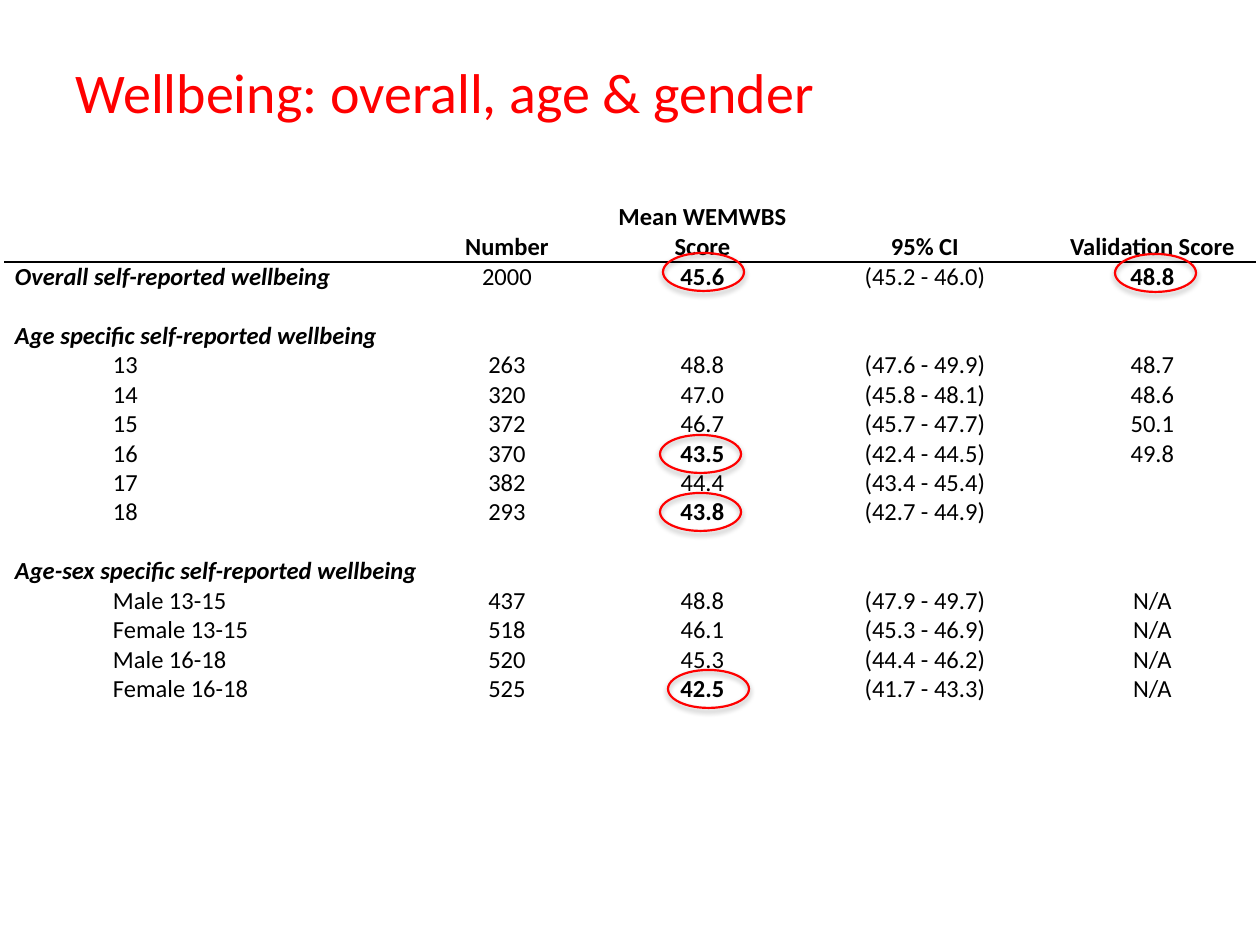
from lxml import etree
from pptx import Presentation
from pptx.dml.color import RGBColor
from pptx.enum.shapes import MSO_SHAPE
from pptx.enum.text import MSO_ANCHOR as ANCHOR, PP_ALIGN as ALIGN
from pptx.oxml import parse_xml
from pptx.oxml.ns import nsdecls, qn
from pptx.util import Pt

EMU_PER_PX = 914400 / 126
RED = RGBColor(0xFF, 0x00, 0x00)
BLACK = RGBColor(0x00, 0x00, 0x00)
FONT = "Calibri"

COL_WIDTHS = [98, 306, 196, 195, 250, 205]
HEADER_H, ROW_H = 67, 29
CELL_INSET = 10
HEADINGS = ["", "", "Number", "Mean WEMWBS Score", "95% CI", "Validation Score"]
BLANK = [""] * 6
ROWS = [
    ["Overall self-reported wellbeing", "", "2000", "45.6", "(45.2 - 46.0)", "48.8"],
    BLANK,
    ["Age specific self-reported wellbeing", *BLANK[1:]],
    ["", "13", "263", "48.8", "(47.6 - 49.9)", "48.7"],
    ["", "14", "320", "47.0", "(45.8 - 48.1)", "48.6"],
    ["", "15", "372", "46.7", "(45.7 - 47.7)", "50.1"],
    ["", "16", "370", "43.5", "(42.4 - 44.5)", "49.8"],
    ["", "17", "382", "44.4", "(43.4 - 45.4)", ""],
    ["", "18", "293", "43.8", "(42.7 - 44.9)", ""],
    BLANK,
    ["Age-sex specific self-reported wellbeing", *BLANK[1:]],
    ["", "Male 13-15", "437", "48.8", "(47.9 - 49.7)", "N/A"],
    ["", "Female 13-15", "518", "46.1", "(45.3 - 46.9)", "N/A"],
    ["", "Male 16-18", "520", "45.3", "(44.4 - 46.2)", "N/A"],
    ["", "Female 16-18", "525", "42.5", "(41.7 - 43.3)", "N/A"],
]
KEY_SCORES = {(1, 3), (1, 5), (7, 3), (9, 3), (15, 3)}
RING_SIZE = (81, 38)
RINGS = [(1115, 254), (660, 435), (660, 493), (668, 670), (663, 253)]


def px(n):
    return round(n * EMU_PER_PX)


def add_title(slide, x, y, w, h, text):
    tf = slide.shapes.add_textbox(px(x), px(y), px(w), px(h)).text_frame
    tf.word_wrap = True
    tf.vertical_anchor = ANCHOR.MIDDLE
    p = tf.paragraphs[0]
    p.text = text
    p.font.name, p.font.size, p.font.color.rgb = FONT, Pt(32), RED


def add_rule(cell, side):
    ln = parse_xml(
        f'<a:{side} {nsdecls("a")} w="12700"><a:solidFill>'
        f'<a:srgbClr val="{BLACK}"/></a:solidFill></a:{side}>'
    )
    cell._tc.get_or_add_tcPr().insert(0, ln)


def fill_cell(cell, text, row, col):
    cell.fill.background()
    cell.margin_left = cell.margin_right = px(CELL_INSET)
    cell.margin_top = cell.margin_bottom = 0
    cell.vertical_anchor = ANCHOR.TOP if row and col == 5 else ANCHOR.BOTTOM
    p = cell.text_frame.paragraphs[0]
    p.alignment = ALIGN.CENTER if col > 1 else ALIGN.LEFT
    if not text:
        etree.SubElement(p._p, qn("a:endParaRPr"), sz="1400")
        return
    p.text = text
    font = p.font
    font.name, font.size, font.color.rgb = FONT, Pt(14), BLACK
    font.bold = row == 0 or col == 0 or (row, col) in KEY_SCORES
    font.italic = col == 0


def add_scores(slide, x, y, w, h):
    data = [HEADINGS, *ROWS]
    table = slide.shapes.add_table(
        len(data), len(COL_WIDTHS), px(x), px(y), px(w), px(h)
    ).table
    table.first_row = table.horz_banding = False
    for column, width in zip(table.columns, COL_WIDTHS):
        column.width = px(width)
    for r, values in enumerate(data):
        table.rows[r].height = px(ROW_H if r else HEADER_H)
        for c, text in enumerate(values):
            fill_cell(table.cell(r, c), text, r, c)
        if r and not values[1]:
            last = 1 if values[2] else 5
            table.cell(r, 0).merge(table.cell(r, last))
    for c in range(len(COL_WIDTHS)):
        add_rule(table.cell(0, c), "lnB")
        add_rule(table.cell(1, c), "lnT")


def add_ring(slide, x, y, w, h):
    sp = slide.shapes.add_shape(MSO_SHAPE.OVAL, px(x), px(y), px(w), px(h))
    sp.fill.background()
    sp.line.color.rgb, sp.line.width = RED, Pt(1.25)
    sp.shadow.inherit = False
    sp._element.spPr.find(qn("a:effectLst")).append(parse_xml(
        f'<a:outerShdw {nsdecls("a")} blurRad="40000" dist="23000" dir="5400000" '
        f'rotWithShape="0"><a:srgbClr val="{BLACK}"><a:alpha val="35000"/>'
        '</a:srgbClr></a:outerShdw>'
    ))


def main():
    prs = Presentation()
    prs.slide_width, prs.slide_height = px(1260), px(945)
    slide = prs.slides.add_slide(prs.slide_layouts[6])
    add_title(slide, 63, 38, 1134, 107, "Wellbeing: overall, age & gender")
    add_scores(slide, 5, 195, sum(COL_WIDTHS), HEADER_H + ROW_H * len(ROWS))
    for x, y in RINGS:
        add_ring(slide, x, y, *RING_SIZE)
    prs.save("out.pptx")


if __name__ == "__main__":
    main()
